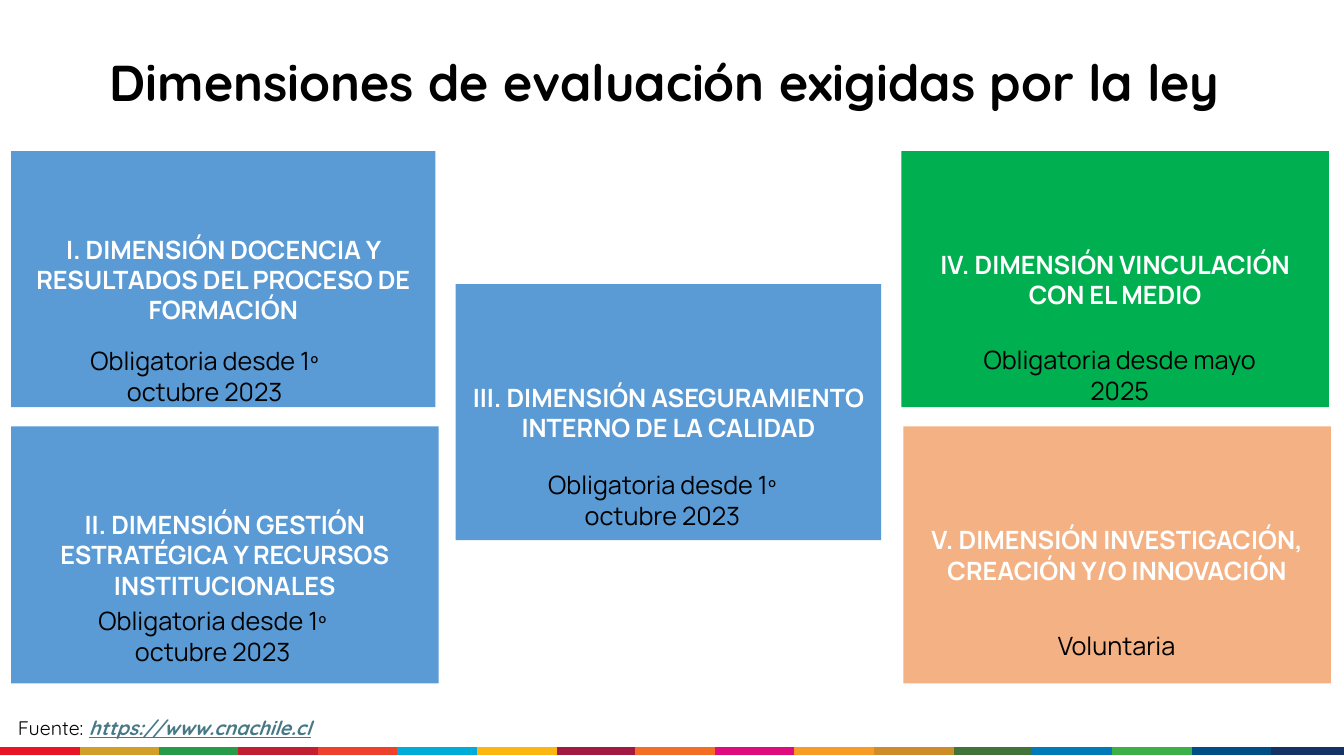
import lxml.etree
import pptx
import pptx.dml.color
import pptx.enum.shapes
import pptx.enum.text
import pptx.oxml.ns
import pptx.util

PX = 9144  # 100 px to the inch
CENTER = pptx.enum.text.PP_ALIGN.CENTER
MIDDLE = pptx.enum.text.MSO_ANCHOR.MIDDLE
BLUE, GREEN, ORANGE = "5B9BD5", "00B050", "F4B183"
SINCE_2023 = "Obligatoria desde 1º octubre 2023"


def color(value):
    return pptx.dml.color.RGBColor.from_string(value)


def style(font, name, size, value, bold=False):
    font.name = name
    font.size = pptx.util.Pt(size)
    font.color.rgb = color(value)
    font.bold = bold


deck = pptx.Presentation()
deck.slide_width, deck.slide_height = 1333 * PX, 750 * PX
page = deck.slides.add_slide(deck.slide_layouts[5])

# Colour strip along the bottom edge
strip = ["EA1425", "D29F28", "279B48", "C31F33", "EF402B", "00ADD8",
         "FCB612", "A31941", "F36D25", "E00C7F", "F99C24", "CF8D2A",
         "427338", "007BBA", "3EB049", "004E86", "153266"]
for index, value in enumerate(strip):
    start, end = (min(round(step * 78.8), 1333) for step in (index, index + 1))
    line = page.shapes.add_connector(
        pptx.enum.shapes.MSO_CONNECTOR.STRAIGHT,
        start * PX, 745 * PX, end * PX, 745 * PX)
    line.line.color.rgb = color(value)
    line.line.width = pptx.util.Pt(6)
    lxml.etree.SubElement(line.element.spPr, pptx.oxml.ns.qn("a:effectLst"))

# Dimension cards: left, top, width, height, fill, text
cards = [
    (11, 150, 421, 254, BLUE, "I. DIMENSIÓN DOCENCIA Y RESULTADOS DEL PROCESO DE FORMACIÓN"),
    (894, 150, 424, 254, GREEN, "IV. DIMENSIÓN VINCULACIÓN CON EL MEDIO"),
    (11, 423, 424, 255, BLUE, "II. DIMENSIÓN GESTIÓN ESTRATÉGICA Y RECURSOS INSTITUCIONALES"),
    (896, 423, 424, 255, ORANGE, "V. DIMENSIÓN INVESTIGACIÓN, CREACIÓN Y/O INNOVACIÓN"),
    (452, 282, 422, 254, BLUE, "III. DIMENSIÓN ASEGURAMIENTO INTERNO DE LA CALIDAD"),
]
for left, top, width, height, fill, text in cards:
    card = page.shapes.add_shape(
        pptx.enum.shapes.MSO_SHAPE.RECTANGLE,
        left * PX, top * PX, width * PX, height * PX)
    card.shadow.inherit = False
    card.fill.solid()
    card.fill.fore_color.rgb = color(fill)
    card.line.fill.background()
    card.text_frame.text = text
    card.text_frame.vertical_anchor = MIDDLE
    para = card.text_frame.paragraphs[0]
    para.alignment = CENTER
    style(para.runs[0].font, "Manrope", 18, "FFFFFF", bold=True)

# Dates from which each dimension is required: left, top, width, height, text
dates = [
    (73, 338, 260, 71, SINCE_2023),
    (964, 337, 293, 71, "Obligatoria desde mayo 2025"),
    (1009, 620, 197, 40, "Voluntaria"),
    (527, 461, 260, 71, SINCE_2023),
    (81, 596, 260, 71, SINCE_2023),
]
for left, top, width, height, text in dates:
    box = page.shapes.add_textbox(left * PX, top * PX, width * PX, height * PX)
    box.text_frame.word_wrap = True
    box.text_frame.text = text
    para = box.text_frame.paragraphs[0]
    para.alignment = CENTER
    style(para.runs[0].font, "Manrope", 18, "000000")

title = page.shapes.title
title.left, title.top, title.width, title.height = 99 * PX, 12 * PX, 1203 * PX, 145 * PX
title.text_frame.text = "Dimensiones de evaluación exigidas por la ley"
title.text_frame.vertical_anchor = MIDDLE
para = title.text_frame.paragraphs[0]
para.alignment = pptx.enum.text.PP_ALIGN.LEFT
para.line_spacing = 0.9
style(para.runs[0].font, "Quicksand", 36, "000000", bold=True)

source = page.shapes.add_textbox(8 * PX, 705 * PX, 330 * PX, 34 * PX)
source.text_frame.word_wrap = False
para = source.text_frame.paragraphs[0]
label, address = para.add_run(), para.add_run()
label.text = "Fuente: "
address.text = "https://www.cnachile.cl"
style(label.font, "Quicksand", 14, "000000")
style(address.font, "Quicksand", 14, "467886", bold=True)
address.font.italic = True
address.font.underline = True

deck.save("out.pptx")
